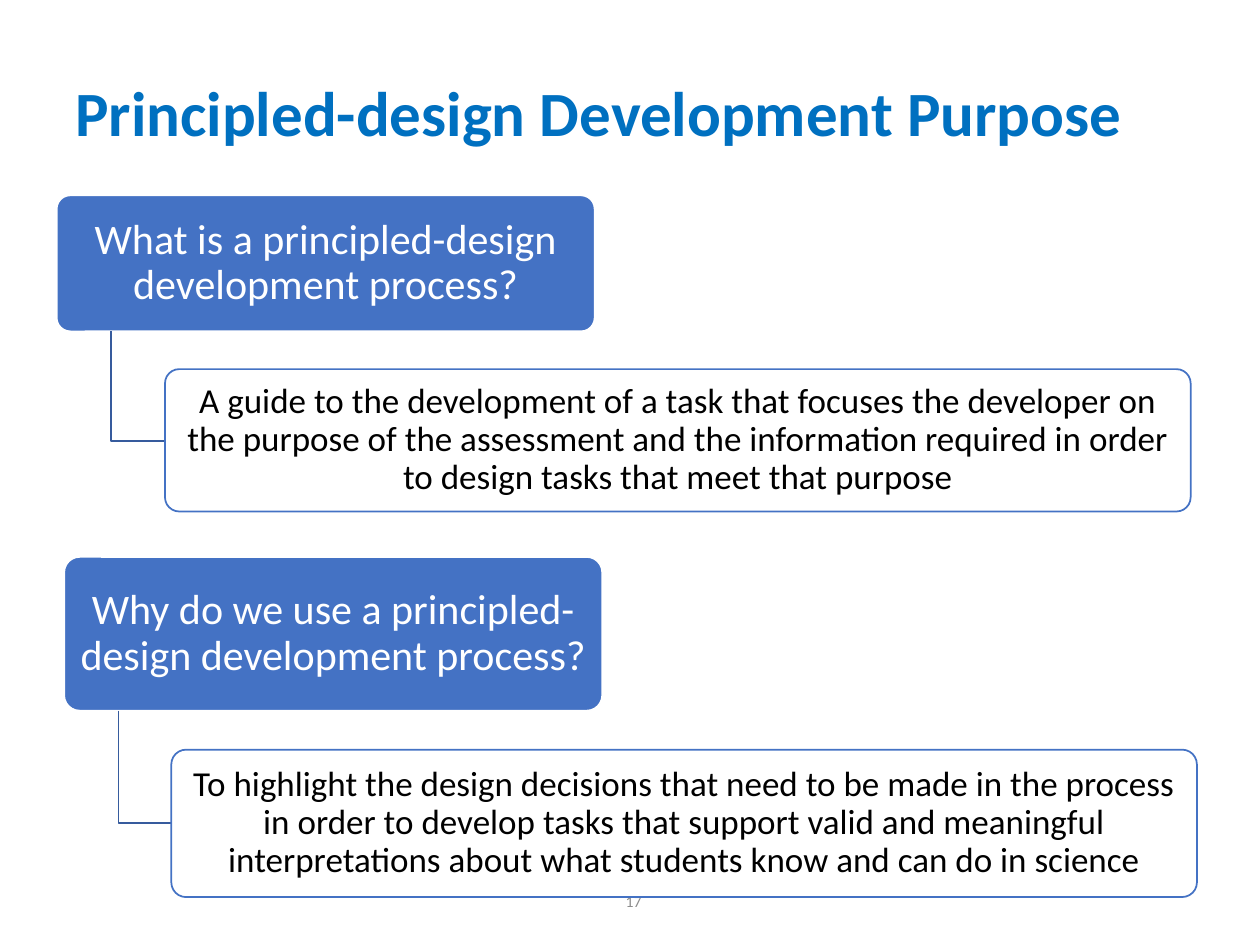
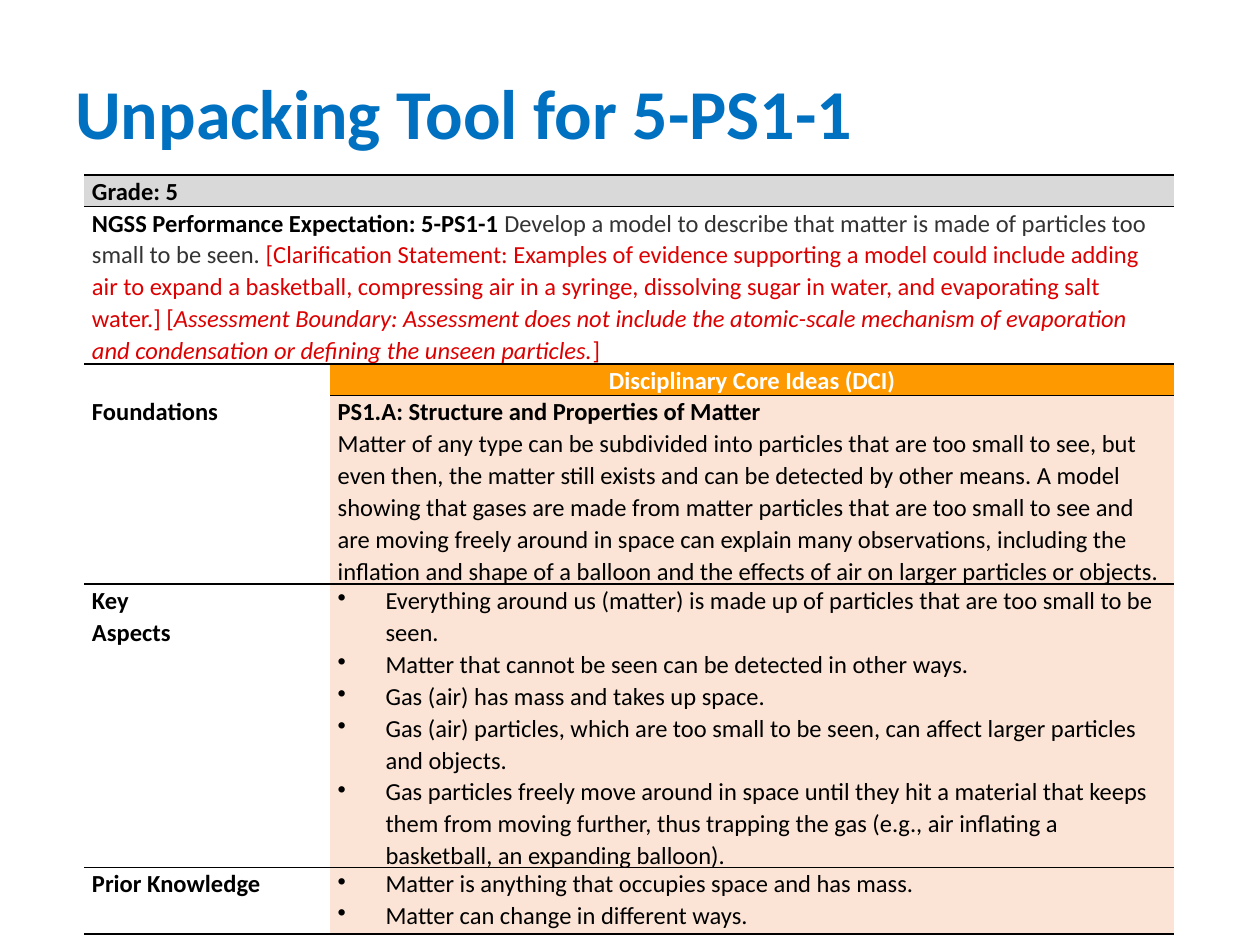
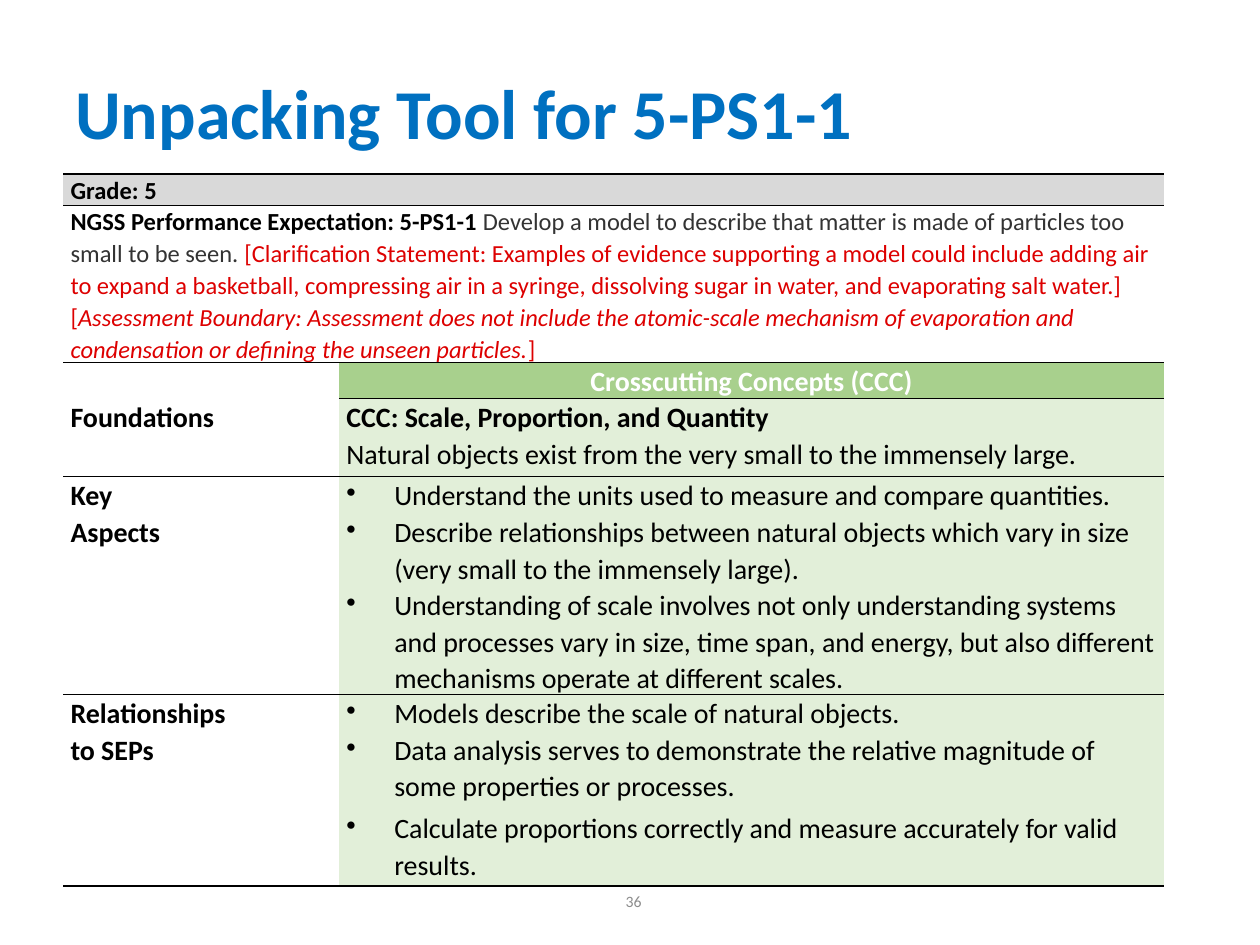
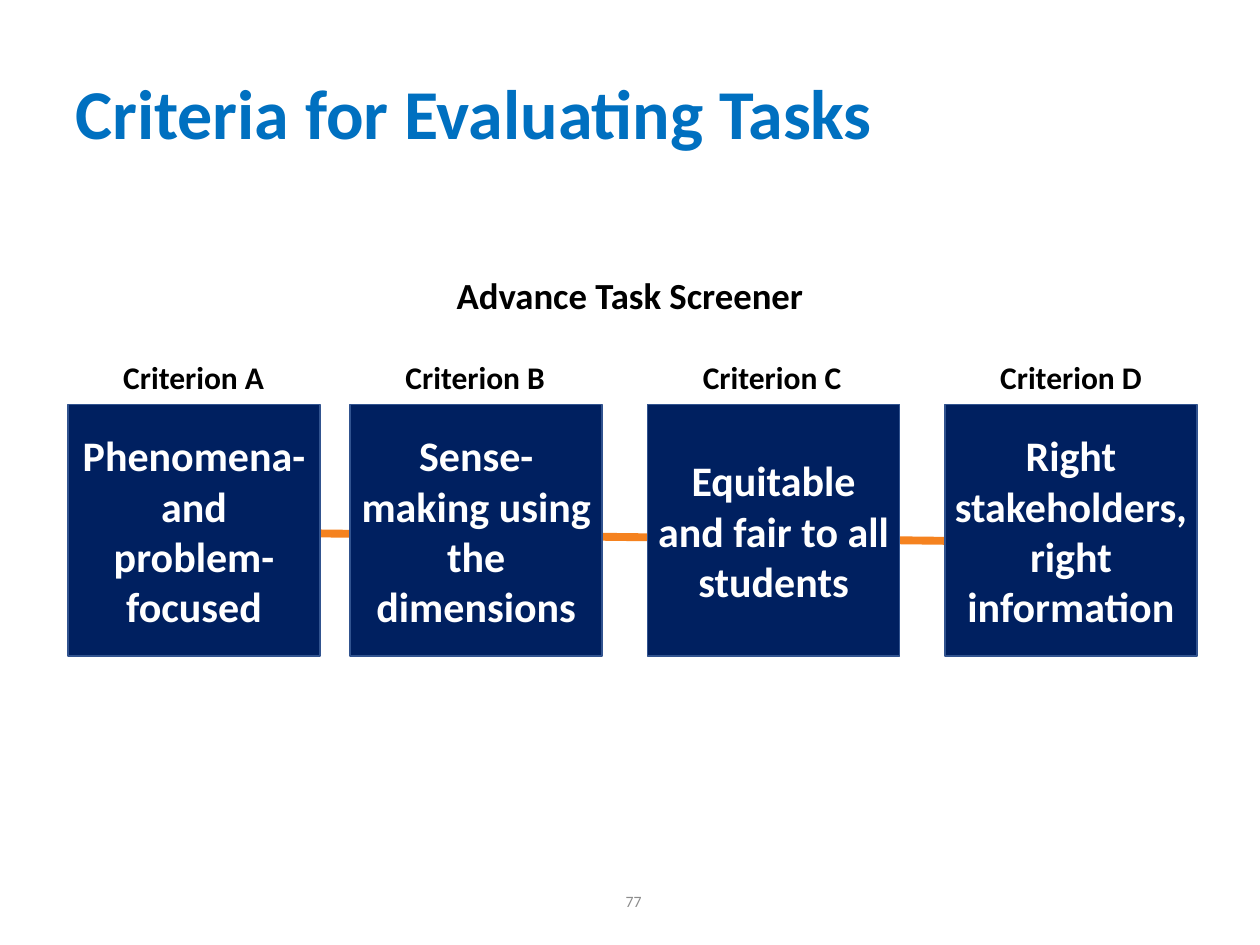
from dataclasses import dataclass
from typing import Optional, Sequence

from lxml import etree
from pptx import Presentation
from pptx import util as u
from pptx.dml.color import RGBColor
from pptx.enum import shapes, text
from pptx.oxml.ns import qn

COLORS = {
    "title": "0070C0", "page": "8C8C8C", "white": "FFFFFF", "black": "000000",
    "blue": "4472C4", "elbow": "365B9D", "navy": "002060", "edge": "31538F",
    "link": "F5821F", "gray": "D9D9D9", "ink": "333333", "red": "DD0000",
    "orange": "FF9900", "peach": "FBE4D5", "green": "A8D08D", "mint": "E2EFD9",
}
FONT = "Calibri"
LEFT, MID, RIGHT = text.PP_ALIGN.LEFT, text.PP_ALIGN.CENTER, text.PP_ALIGN.RIGHT
TOP, CENTER = text.MSO_ANCHOR.TOP, text.MSO_ANCHOR.MIDDLE
HANG = u.Inches(0.38)


@dataclass(frozen=True)
class Run:
    words: str
    color: str = "black"
    bold: bool = False
    slant: bool = False


@dataclass(frozen=True)
class Para:
    runs: Sequence[Run]
    size: float
    align: text.PP_ALIGN = LEFT
    lead: float = 1.0
    after: float = 0
    bullet: bool = False


@dataclass(frozen=True)
class Box:
    x: float
    y: float
    w: float
    h: float

    def emu(self) -> tuple:
        return tuple(u.Inches(v) for v in (self.x, self.y, self.w, self.h))


@dataclass(frozen=True)
class Pair:
    ask: str
    reply: str
    head: Box
    body: Box
    drop: float


@dataclass(frozen=True)
class Row:
    label: Sequence[str]
    paras: Sequence[Para]


@dataclass(frozen=True)
class Tool:
    box: Box
    cols: Sequence[float]
    heights: Sequence[float]
    size: float
    name: str
    gap: float
    dark: str
    pale: str
    rows: Sequence[Row]


@dataclass(frozen=True)
class Tile:
    x: float
    mark: str
    words: str


def rgb(name: str) -> RGBColor:
    return RGBColor.from_string(COLORS[name])


def write(frame, paras: Sequence[Para]) -> None:
    for i, para in enumerate(paras):
        p = frame.paragraphs[0] if i == 0 else frame.add_paragraph()
        if para.bullet:
            ppr = p._p.get_or_add_pPr()
            ppr.set("marL", str(HANG))
            ppr.set("indent", str(-HANG))
            etree.SubElement(ppr, qn("a:buChar"), char="•")
        p.alignment = para.align
        p.line_spacing = para.lead
        p.space_before = u.Pt(0)
        p.space_after = u.Pt(para.after)
        for item in para.runs:
            run = p.add_run()
            run.text = item.words
            font = run.font
            font.name, font.size = FONT, u.Pt(para.size)
            font.bold, font.italic = item.bold, item.slant
            font.color.rgb = rgb(item.color)
        if not para.runs:
            etree.SubElement(p._p, qn("a:endParaRPr"), sz=str(int(para.size * 100)))


def pad(frame, side: float, edge: float) -> None:
    frame.margin_left = frame.margin_right = u.Inches(side)
    frame.margin_top = frame.margin_bottom = u.Inches(edge)


def label(slide, box: Box, para: Para, anchor=CENTER, wrap: bool = True) -> None:
    frame = slide.shapes.add_textbox(*box.emu()).text_frame
    frame.word_wrap = wrap
    if not wrap:
        frame.auto_size = text.MSO_AUTO_SIZE.SHAPE_TO_FIT_TEXT
    frame.vertical_anchor = anchor
    write(frame, [para])


def panel(slide, kind, box: Box, fill: str, line: str, para: Para,
          side: float, edge: float):
    shape = slide.shapes.add_shape(kind, *box.emu())
    shape.shadow.inherit = False
    shape.fill.solid()
    shape.fill.fore_color.rgb = rgb(fill)
    shape.line.color.rgb = rgb(line)
    shape.line.width = u.Pt(1)
    frame = shape.text_frame
    frame.word_wrap = True
    frame.vertical_anchor = CENTER
    pad(frame, side, edge)
    write(frame, [para])
    return shape


def start(deck, title: str, size: float = 40, page: Optional[int] = None):
    slide = deck.slides.add_slide(deck.slide_layouts[6])
    if page:
        label(slide, Box(2.94, 6.95, 2.25, 0.4),
              Para([Run(str(page), "page")], 9, RIGHT))
    label(slide, Box(0.5, 0.3, 9, 1.25),
          Para([Run(title, "title", True)], size, lead=0.9))
    return slide


def elbow(slide, pair: Pair) -> None:
    x = u.Inches(pair.head.x + 0.43)
    low = u.Inches(pair.drop)
    path = slide.shapes.build_freeform(x, u.Inches(pair.head.y + pair.head.h))
    path.add_line_segments([(x, low), (u.Inches(pair.body.x), low)], close=False)
    shape = path.convert_to_shape()
    shape.shadow.inherit = False
    shape.fill.background()
    shape.line.color.rgb = rgb("elbow")
    shape.line.width = u.Pt(1)


def branch(slide, pair: Pair) -> None:
    kind = shapes.MSO_SHAPE.ROUNDED_RECTANGLE
    head = panel(slide, kind, pair.head, "blue", "white",
                 Para([Run(pair.ask, "white")], 24, MID, 0.9), 0.05, 0.03)
    elbow(slide, pair)
    body = panel(slide, kind, pair.body, "white", "blue",
                 Para([Run(pair.reply)], 20, MID, 0.9), 0.04, 0.03)
    for shape in (head, body):
        shape.adjustments[0] = 0.1
    tint = body._element.spPr.find(qn("a:solidFill"))[0]
    etree.SubElement(tint, qn("a:alpha"), val="90000")


def border(cell, sides: str) -> None:
    tcpr = cell._tc.get_or_add_tcPr()
    for side in "LRTB":
        line = etree.SubElement(tcpr, qn(f"a:ln{side}"), w=str(u.Pt(1)))
        if side in sides:
            fill = etree.SubElement(line, qn("a:solidFill"))
            etree.SubElement(fill, qn("a:srgbClr"), val=COLORS["black"])
        else:
            etree.SubElement(line, qn("a:noFill"))


def fill_cell(cell, paras: Sequence[Para], color: Optional[str], sides: str) -> None:
    border(cell, sides)
    if color:
        cell.fill.solid()
        cell.fill.fore_color.rgb = rgb(color)
    else:
        cell.fill.background()
    pad(cell, 0.06, 0)
    write(cell.text_frame, paras)


def strong(words: str, size: float, color: str = "black", **rest) -> Para:
    return Para([Run(words, color, True)], size, lead=1.07, **rest)


def plain(words: str, size: float, **rest) -> Para:
    return Para([Run(words)], size, lead=1.07, **rest)


def points(size: float, *lines: str, spaced: int = 0) -> list:
    first = len(lines) - spaced
    return [plain(words, size, after=3 if i >= first else 0, bullet=True)
            for i, words in enumerate(lines)]


GOAL = Para([
    Run("NGSS Performance Expectation: 5-PS1-1 ", bold=True),
    Run("Develop a model to describe that matter is made of particles too "
        "small to be seen. ", "ink"),
    Run("[Clarification Statement: Examples of evidence supporting a model could "
        "include adding air to expand a basketball, compressing air in a syringe, "
        "dissolving sugar in water, and evaporating salt water.] [", "red"),
    Run("Assessment Boundary: Assessment does not include the atomic-scale mechanism "
        "of evaporation and condensation or defining the unseen particles.",
        "red", slant=True),
    Run("]", "red"),
], 14, lead=1.07, after=3)


def unpack(slide, tool: Tool) -> None:
    count = len(tool.heights)
    frame = slide.shapes.add_table(count, 2, *tool.box.emu())
    table = frame.table
    table.first_row = table.horz_banding = False
    for col, width in zip(table.columns, tool.cols):
        col.width = u.Inches(width)
    for row, height in zip(table.rows, tool.heights):
        row.height = u.Inches(height)
    frame.height = u.Inches(tool.box.h)

    tops = [(strong("Grade: 5", 14, after=3), "gray"), (GOAL, None)]
    for i, (para, color) in enumerate(tops):
        table.cell(i, 0).merge(table.cell(i, 1))
        fill_cell(table.cell(i, 0), [para], color, "TB")
        border(table.cell(i, 1), "TB")

    fill_cell(table.cell(2, 0), [Para([], 14)], "white", "T")
    name = strong(tool.name, tool.size, "white", align=MID, after=tool.gap)
    fill_cell(table.cell(2, 1), [name], tool.dark, "TB")
    for i, row in enumerate(tool.rows, 3):
        names = [strong(words, tool.size) for words in row.label]
        fill_cell(table.cell(i, 0), names, "white", "B" if i == 3 else "TB")
        fill_cell(table.cell(i, 1), row.paras, tool.pale, "TB")


PAIRS = [
    Pair("What is a principled-design development process?",
         "A guide to the development of a task that focuses the developer on the "
         "purpose of the assessment and the information required in order to design "
         "tasks that meet that purpose",
         Box(0.45, 1.55, 4.27, 1.08), Box(1.31, 2.93, 8.14, 1.13), 3.5),
    Pair("Why do we use a principled-design development process?",
         "To highlight the design decisions that need to be made in the process in "
         "order to develop tasks that support valid and meaningful interpretations "
         "about what students know and can do in science",
         Box(0.51, 4.42, 4.27, 1.22), Box(1.36, 5.95, 8.14, 1.17), 6.53),
]

IDEAS = Tool(
    Box(0.67, 1.39, 8.65, 5.97), (1.95, 6.7), (0.23, 1.17, 0.23, 1.41, 2.12, 0.53),
    14, "Disciplinary Core Ideas (DCI)", 0, "orange", "peach", [
        Row(["Foundations"], [
            strong("PS1.A: Structure and Properties of Matter", 14),
            plain("Matter of any type can be subdivided into particles that are too "
                  "small to see, but even then, the matter still exists and can be "
                  "detected by other means. A model showing that gases are made from "
                  "matter particles that are too small to see and are moving freely "
                  "around in space can explain many observations, including the "
                  "inflation and shape of a balloon and the effects of air on larger "
                  "particles or objects.", 14, after=3)]),
        Row(["Key", "Aspects"], points(
            14,
            "Everything around us (matter) is made up of particles that are too "
            "small to be seen.",
            "Matter that cannot be seen can be detected in other ways.",
            "Gas (air) has mass and takes up space.",
            "Gas (air) particles, which are too small to be seen, can affect larger "
            "particles and objects.",
            "Gas particles freely move around in space until they hit a material that "
            "keeps them from moving further, thus trapping the gas (e.g., air "
            "inflating a basketball, an expanding balloon).")),
        Row(["Prior Knowledge"], points(
            14,
            "Matter is anything that occupies space and has mass.",
            "Matter can change in different ways.")),
    ])

CROSS = Tool(
    Box(0.5, 1.38, 8.74, 5.62), (2.19, 6.55), (0.15, 0.48, 0.15, 0.62, 1.73, 1.52),
    16, "Crosscutting Concepts (CCC)", 3, "green", "mint", [
        Row(["Foundations"], [
            strong("CCC: Scale, Proportion, and Quantity", 16),
            plain("Natural objects exist from the very small to the immensely "
                  "large.", 16)]),
        Row(["Key", "Aspects"], points(
            16,
            "Understand the units used to measure and compare quantities.",
            "Describe relationships between natural objects which vary in size (very "
            "small to the immensely large).",
            "Understanding of scale involves not only understanding systems and "
            "processes vary in size, time span, and energy, but also different "
            "mechanisms operate at different scales.")),
        Row(["Relationships", "to SEPs"], points(
            16,
            "Models describe the scale of natural objects.",
            "Data analysis serves to demonstrate the relative magnitude of some "
            "properties or processes.",
            "Calculate proportions correctly and measure accurately for valid "
            "results.", spaced=2)),
    ])

TILES = [
    Tile(0.54, "A", "Phenomena- and problem- focused"),
    Tile(2.78, "B", "Sense- making using the dimensions"),
    Tile(5.14, "C", "Equitable and fair to all students"),
    Tile(7.5, "D", "Right stakeholders, right information"),
]


def screen(slide) -> None:
    label(slide, Box(0.5, 2.15, 9, 0.42),
          Para([Run("Advance Task Screener", bold=True)], 21, MID, 0.9))
    ends = [u.Inches(v) for v in (0.54, 4.21, 8.15, 4.3)]
    line = slide.shapes.add_connector(shapes.MSO_CONNECTOR.STRAIGHT, *ends)
    line.line.color.rgb = rgb("link")
    line.line.width = u.Pt(4.5)
    etree.SubElement(line._element.spPr, qn("a:effectLst"))
    for tile in TILES:
        panel(slide, shapes.MSO_SHAPE.RECTANGLE, Box(tile.x, 3.21, 2, 2),
              "navy", "edge", Para([Run(tile.words, "white", True)], 24, MID),
              0.07, 0.04)
        label(slide, Box(tile.x + 0.34, 2.79, 1.33, 0.4),
              Para([Run(f"Criterion {tile.mark}", bold=True)], 18), TOP, False)


def main() -> None:
    deck = Presentation()
    deck.slide_width, deck.slide_height = u.Inches(10), u.Inches(7.5)
    slide = start(deck, "Principled-design Development Purpose", 36, 17)
    for pair in PAIRS:
        branch(slide, pair)
    unpack(start(deck, "Unpacking Tool for 5-PS1-1"), IDEAS)
    unpack(start(deck, "Unpacking Tool for 5-PS1-1", page=36), CROSS)
    screen(start(deck, "Criteria for Evaluating Tasks", page=77))
    deck.save("out.pptx")


if __name__ == "__main__":
    main()
